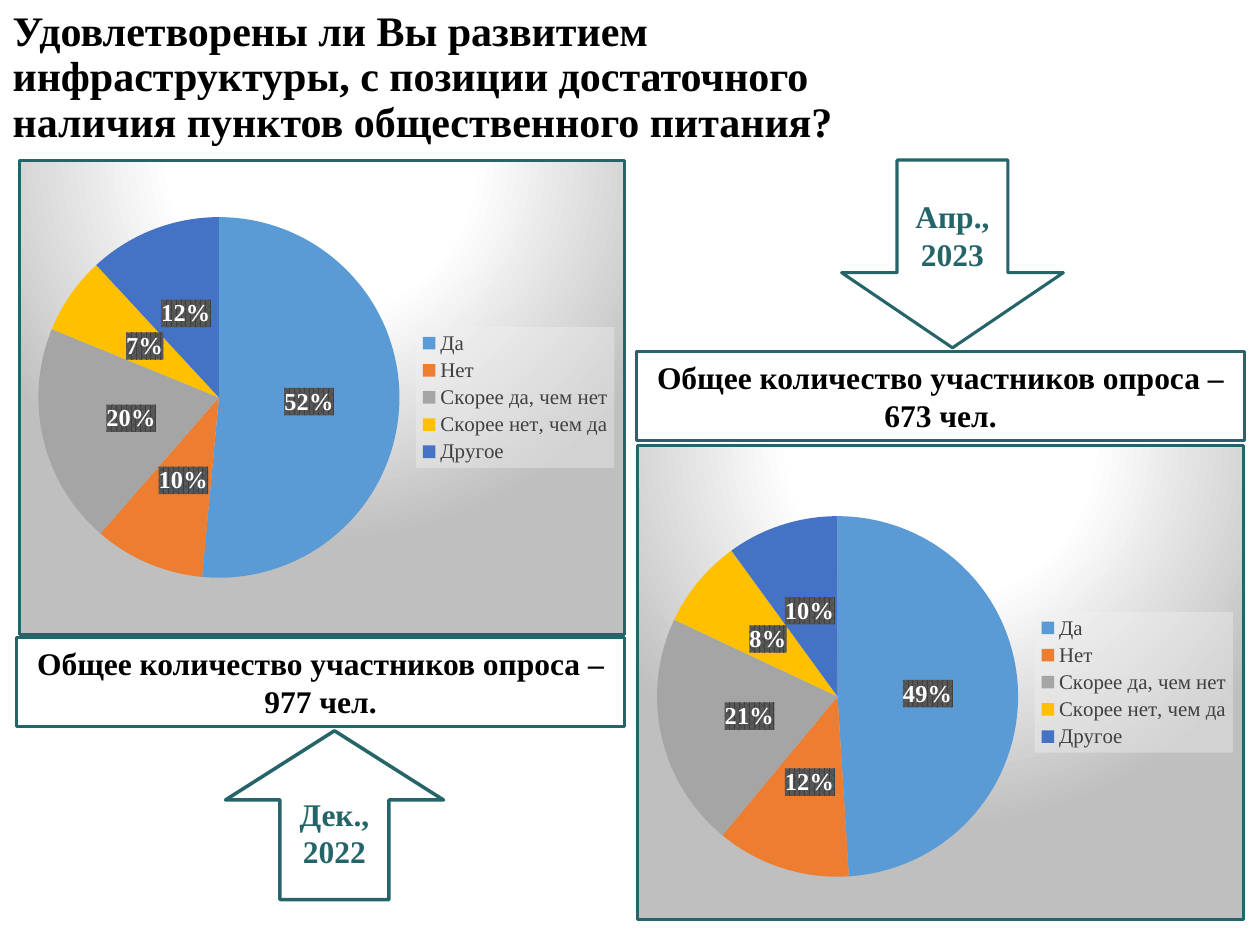
from dataclasses import dataclass

from pptx import Presentation
from pptx.chart.data import CategoryChartData
from pptx.dml.color import RGBColor
from pptx.enum.chart import XL_CHART_TYPE as ChartType, XL_LABEL_POSITION as LabelPos
from pptx.enum.chart import XL_LEGEND_POSITION as LegendPos
from pptx.enum.shapes import MSO_SHAPE as Shape
from pptx.enum.text import MSO_ANCHOR as Anchor, MSO_AUTO_SIZE as AutoSize, PP_ALIGN as Align
from pptx.oxml import parse_xml
from pptx.oxml.ns import nsdecls, qn
from pptx.util import Inches, Pt


@dataclass(frozen=True)
class Theme:
    font: str = "Times New Roman"
    chart_font: str = "Calibri"
    ink: str = "000000"
    accent: str = "256569"
    white: str = "FFFFFF"
    shade: str = "BFBFBF"
    legend: str = "404040"
    legend_fill: str = "F2F2F2"
    label_dark: str = "404040"
    label_light: str = "595959"
    slices: tuple = ("5B9BD5", "ED7D31", "A5A5A5", "FFC000", "4472C4")
    title_size: int = 24
    body_size: int = 18
    label_size: int = 14
    legend_size: int = 12
    chart_size: int = 10
    border: float = 1.75


@dataclass(frozen=True)
class Box:
    left: float
    top: float
    width: float
    height: float

    def lengths(self):
        return [Inches(v) for v in (self.left, self.top, self.width, self.height)]


@dataclass(frozen=True)
class Survey:
    values: tuple
    chart: Box
    pie_top: float
    total: str
    total_box: Box
    date: str
    arrow: Shape
    arrow_box: Box
    arrow_head: float
    arrow_line: float
    arrow_fill: str | None = None


T = Theme()
ANSWERS = ("Да", "Нет", "Скорее да, чем нет", "Скорее нет, чем да", "Другое")
SURVEYS = (
    Survey((52, 10, 20, 7, 12), Box(0.14, 1.26, 4.83, 3.79), 0.12,
           "977", Box(0.13, 5.06, 4.83, 0.71),
           "Дек., 2022", Shape.UP_ARROW, Box(1.79, 5.8, 1.73, 1.34), 0.41, 2),
    Survey((49, 12, 21, 8, 10), Box(5.05, 3.52, 4.83, 3.79), 0.15,
           "673", Box(5.05, 2.79, 4.83, 0.71),
           "Апр., 2023", Shape.DOWN_ARROW, Box(6.68, 1.27, 1.76, 1.49), 0.4, T.border, T.white),
)


def rgb(color: str) -> RGBColor:
    return RGBColor.from_string(color)


def format_font(font, size, color, bold=False, name=T.font) -> None:
    font.name, font.size, font.bold = name, Pt(size), bold
    font.color.rgb = rgb(color)


def write_text(sp, text: str, *, size=T.body_size, color=T.ink, bold=True,
               align=Align.CENTER, anchor=Anchor.MIDDLE, fit=AutoSize.NONE, spacing=None):
    tf = sp.text_frame
    tf.word_wrap, tf.vertical_anchor, tf.auto_size = True, anchor, fit
    p = tf.paragraphs[0]
    p.alignment, p.line_spacing = align, spacing
    r = p.add_run()
    r.text = text
    format_font(r.font, size, color, bold)
    return tf


def add_outlined(slide, kind: Shape, box: Box, line=T.border, fill=None):
    sp = slide.shapes.add_shape(kind, *box.lengths())
    sp.shadow.inherit = False
    if fill:
        sp.fill.solid()
        sp.fill.fore_color.rgb = rgb(fill)
    else:
        sp.fill.background()
    sp.line.color.rgb = rgb(T.accent)
    sp.line.width = Pt(line)
    return sp


def chart_props(fill: str, line: str = "<a:ln><a:noFill/></a:ln>"):
    return parse_xml(f'<c:spPr {nsdecls("c", "a")}>{fill}{line}</c:spPr>')


def solid(color: str, extra: str = "") -> str:
    return f'<a:solidFill><a:srgbClr val="{color}">{extra}</a:srgbClr></a:solidFill>'


def style_background(chart) -> None:
    """Radial gradient centred above the frame, with an accent border."""
    stops = "".join(f'<a:gs pos="{pos * 1000}"><a:srgbClr val="{color}"/></a:gs>'
                    for pos, color in ((0, T.white), (39, T.white), (100, T.shade)))
    gradient = (f'<a:gradFill><a:gsLst>{stops}</a:gsLst><a:path path="circle">'
                '<a:fillToRect l="50000" t="-80000" r="50000" b="180000"/></a:path></a:gradFill>')
    border = f'<a:ln w="{Pt(T.border)}">{solid(T.accent)}</a:ln>'
    chart.element.find(qn("c:chart")).addnext(chart_props(gradient, border))


def place_pie(chart, top: float) -> None:
    """Fix the pie's position as fractions of the chart frame."""
    area = chart.element.find(".//" + qn("c:plotArea"))
    for old in area.findall(qn("c:layout")):
        area.remove(old)
    modes = '<c:layoutTarget val="inner"/><c:xMode val="edge"/><c:yMode val="edge"/>'
    sizes = "".join(f'<c:{key} val="{value}"/>'
                    for key, value in (("x", 0.03), ("y", top), ("w", 0.6), ("h", 0.76)))
    area.insert(0, parse_xml(f'<c:layout {nsdecls("c")}><c:manualLayout>{modes}{sizes}'
                             '</c:manualLayout></c:layout>'))


def fill_behind_text(element, fill: str) -> None:
    element.find(qn("c:txPr")).addprevious(chart_props(fill))


def add_pie(slide, survey: Survey) -> None:
    data = CategoryChartData()
    data.categories = ANSWERS
    data.add_series("Series 1", survey.values)
    chart = slide.shapes.add_chart(ChartType.PIE, *survey.chart.lengths(), data).chart
    chart.has_title = False
    format_font(chart.font, T.chart_size, T.ink, name=T.chart_font)
    style_background(chart)
    place_pie(chart, survey.pie_top)

    plot = chart.plots[0]
    plot.vary_by_categories = True
    for i, color in enumerate(T.slices):
        point = plot.series[0].points[i].format
        point.fill.solid()
        point.fill.fore_color.rgb = rgb(color)
        point.line.fill.background()

    labels = plot.series[0].data_labels
    labels.show_value = True
    labels.number_format, labels.number_format_is_linked = '0"%"', False
    labels.position = LabelPos.CENTER
    format_font(labels.font, T.label_size, T.white, True)
    fill_behind_text(chart.element.find(".//" + qn("c:dLbls")),
                     f'<a:pattFill prst="pct75"><a:fgClr><a:srgbClr val="{T.label_dark}"/></a:fgClr>'
                     f'<a:bgClr><a:srgbClr val="{T.label_light}"/></a:bgClr></a:pattFill>')

    chart.has_legend = True
    chart.legend.position = LegendPos.RIGHT
    chart.legend.include_in_layout = False
    format_font(chart.legend.font, T.legend_size, T.legend)
    fill_behind_text(chart.element.find(".//" + qn("c:legend")),
                     solid(T.legend_fill, '<a:alpha val="39000"/>'))


def add_survey(slide, survey: Survey) -> None:
    add_pie(slide, survey)
    total = add_outlined(slide, Shape.RECTANGLE, survey.total_box)
    write_text(total, f"Общее количество участников опроса – {survey.total} чел.",
               anchor=Anchor.TOP, fit=AutoSize.SHAPE_TO_FIT_TEXT)
    arrow = add_outlined(slide, survey.arrow, survey.arrow_box, survey.arrow_line, survey.arrow_fill)
    arrow.adjustments[0], arrow.adjustments[1] = 0.5, survey.arrow_head
    write_text(arrow, survey.date, color=T.accent)


def main() -> None:
    prs = Presentation()
    prs.slide_width, prs.slide_height = Inches(10), Inches(7.5)
    slide = prs.slides.add_slide(prs.slide_layouts[5])
    title = slide.shapes.title
    title.left, title.top, title.width, title.height = Box(0, 0, 7.67, 0.52).lengths()
    tf = write_text(title, "Удовлетворены ли Вы развитием инфраструктуры, с позиции "
                    "достаточного наличия пунктов общественного питания?",
                    size=T.title_size, align=Align.LEFT, anchor=Anchor.TOP, spacing=0.9)
    tf.margin_top = Inches(0.08)
    for survey in SURVEYS:
        add_survey(slide, survey)
    prs.save("out.pptx")


if __name__ == "__main__":
    main()
